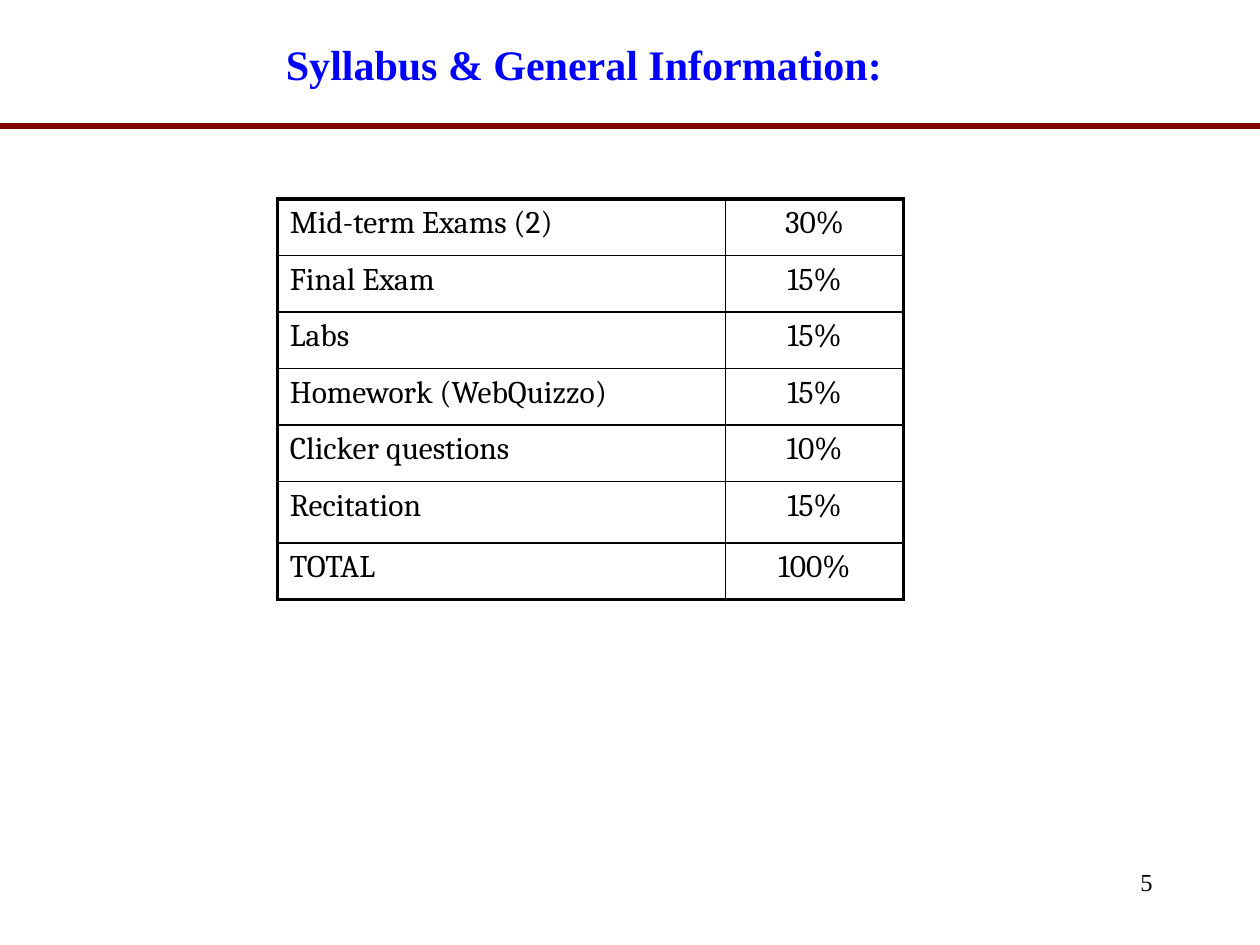
from lxml import etree
from pptx import Presentation
from pptx.dml.color import RGBColor
from pptx.enum.shapes import MSO_CONNECTOR
from pptx.enum.text import MSO_ANCHOR, MSO_AUTO_SIZE, PP_ALIGN
from pptx.oxml.ns import qn
from pptx.util import Cm, Pt

LEFT, CENTER, RIGHT = PP_ALIGN.LEFT, PP_ALIGN.CENTER, PP_ALIGN.RIGHT
TOP = MSO_ANCHOR.TOP
NO_FIT = MSO_AUTO_SIZE.NONE
STRAIGHT = MSO_CONNECTOR.STRAIGHT

BLACK, BLUE, MAROON = "000000", "0000FF", "800000"
TITLE = {"name": "Times New Roman", "size": Pt(24), "bold": True}
NUMBER = {"name": "Times New Roman", "size": Pt(14)}
BODY = {"name": "Cambria", "size": Pt(18)}
THIN, THICK = Pt(1), Pt(2.25)

GRADES = [
    ("Mid-term Exams (2)", "30%"),
    ("Final Exam", "15%"),
    ("Labs", "15%"),
    ("Homework (WebQuizzo)", "15%"),
    ("Clicker questions", "10%"),
    ("Recitation", "15%"),
    ("TOTAL", "100%"),
]
WIDTHS = [9.04, 3.58]
HEIGHTS = [1.14] * 5 + [1.24, 1.14]


def color(code):
    return RGBColor.from_string(code)


def write(frame, text, style, ink, align=LEFT):
    frame.text = text
    para = frame.paragraphs[0]
    para.alignment = align
    font = para.runs[0].font
    for key, value in style.items():
        setattr(font, key, value)
    font.color.rgb = color(ink)


def place(shape, left, top, width, height):
    shape.left, shape.top = Cm(left), Cm(top)
    shape.width, shape.height = Cm(width), Cm(height)


def set_frame(frame):
    layout = {"word_wrap": True, "auto_size": NO_FIT, "vertical_anchor": TOP}
    for key, value in layout.items():
        setattr(frame, key, value)


def add_title(slide):
    title = slide.shapes.title
    place(title, 5.51, 0.64, 15.88, 1.27)
    set_frame(title.text_frame)
    write(title.text_frame, "Syllabus & General Information:", TITLE, BLUE)


def add_rule(slide):
    rule = slide.shapes.add_connector(STRAIGHT, 0, Cm(2.54), Cm(25.4), Cm(2.54))
    rule.line.color.rgb = color(MAROON)
    rule.line.width = Pt(3)
    etree.SubElement(rule._element.spPr, qn("a:effectLst"))


def add_number(slide):
    box = slide.shapes.add_textbox(Cm(18.21), Cm(17.35), Cm(5.28), Cm(1.27))
    set_frame(box.text_frame)
    write(box.text_frame, "5", NUMBER, BLACK, RIGHT)


def set_borders(cell, widths):
    """Draw the cell's edges; widths maps L, R, T and B, in that order."""
    props = cell._tc.get_or_add_tcPr()
    for spot, (side, width) in enumerate(widths.items()):
        edge = etree.Element(qn(f"a:ln{side}"), w=str(width))
        fill = etree.SubElement(edge, qn("a:solidFill"))
        etree.SubElement(fill, qn("a:srgbClr"), val=BLACK)
        props.insert(spot, edge)


def add_grades(slide):
    rows, cols = len(GRADES), len(WIDTHS)
    frame = slide.shapes.add_table(
        rows, cols, Cm(5.59), Cm(4.01), Cm(sum(WIDTHS)), Cm(sum(HEIGHTS))
    )
    table = frame.table
    table.first_row = table.horz_banding = False
    for col, width in zip(table.columns, WIDTHS):
        col.width = Cm(width)
    for row, height in zip(table.rows, HEIGHTS):
        row.height = Cm(height)
    for r, line in enumerate(GRADES):
        for c, text in enumerate(line):
            cell = table.cell(r, c)
            cell.fill.background()
            write(cell.text_frame, text, BODY, BLACK, CENTER if c else LEFT)
            outer = {"L": c == 0, "R": c == cols - 1,
                     "T": r == 0, "B": r == rows - 1}
            set_borders(cell, {s: THICK if o else THIN for s, o in outer.items()})


def main():
    deck = Presentation()
    deck.slide_width, deck.slide_height = Cm(25.4), Cm(19.05)
    slide = deck.slides.add_slide(deck.slide_layouts[5])
    add_grades(slide)
    add_rule(slide)
    add_title(slide)
    add_number(slide)
    deck.save("out.pptx")


if __name__ == "__main__":
    main()
